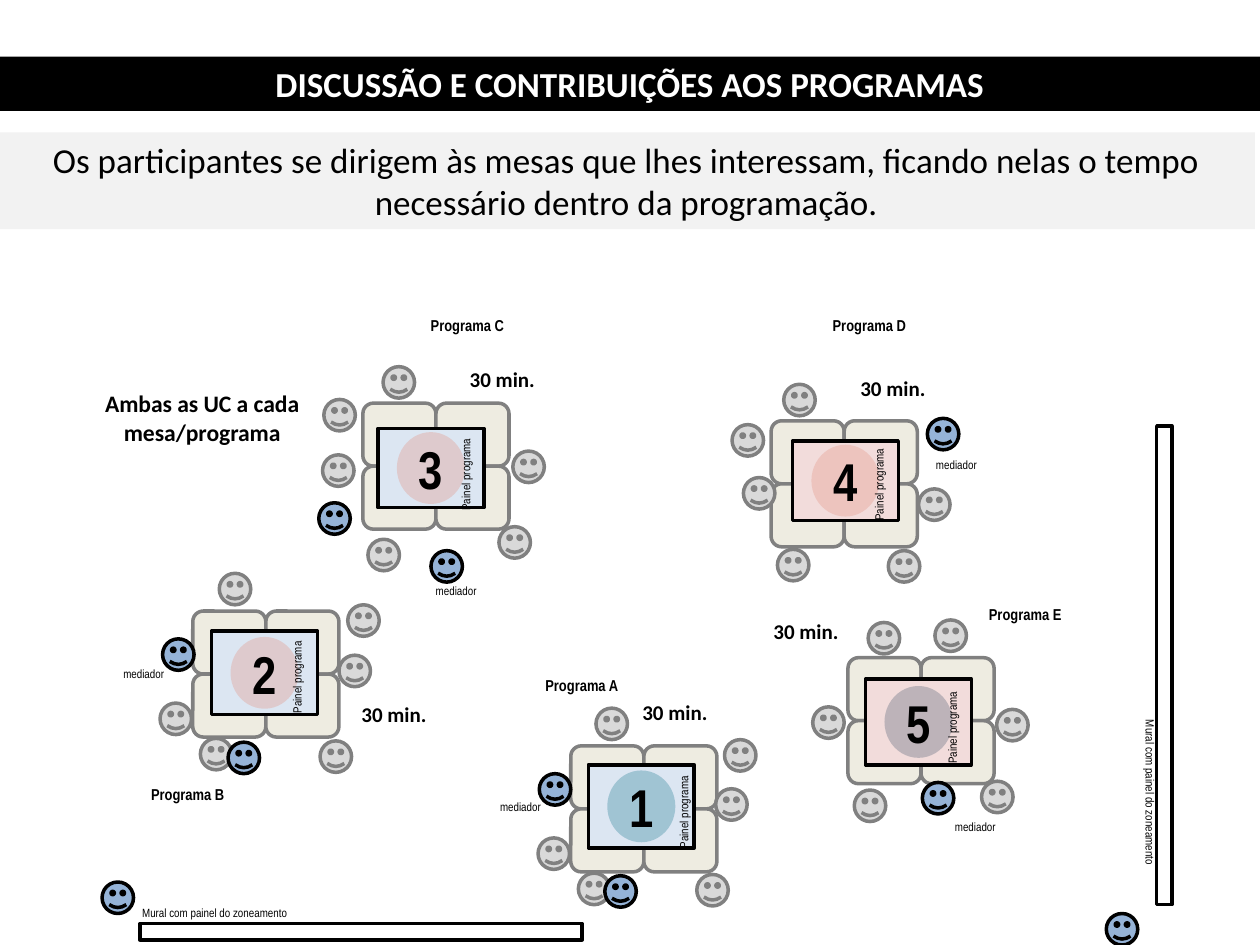
from dataclasses import dataclass

from lxml import etree
from pptx import Presentation
from pptx.dml.color import RGBColor
from pptx.enum.shapes import MSO_SHAPE
from pptx.enum.text import MSO_ANCHOR, MSO_AUTO_SIZE, PP_ALIGN
from pptx.oxml.ns import qn
from pptx.util import Inches, Pt

RECT, ROUNDED = MSO_SHAPE.RECTANGLE, MSO_SHAPE.ROUNDED_RECTANGLE
OVAL, SMILEY = MSO_SHAPE.OVAL, MSO_SHAPE.SMILEY_FACE
LEFT, CENTER = PP_ALIGN.LEFT, PP_ALIGN.CENTER
TOP, MIDDLE = MSO_ANCHOR.TOP, MSO_ANCHOR.MIDDLE
NO_AUTOFIT = MSO_AUTO_SIZE.NONE


@dataclass(frozen=True)
class Theme:
    """Colours, fonts and type sizes of the slide."""
    black: str = "000000"
    white: str = "FFFFFF"
    band: str = "F2F2F2"
    desk: str = "EEECE1"
    grey: str = "808080"
    participant: str = "D9D9D9"
    mediator: str = "95B3D7"
    blue_panel: str = "DCE6F2"
    pink_panel: str = "F2DCDB"
    coral: str = "E4988A"
    slate: str = "5C697C"
    teal: str = "31859C"
    main_font: str = "Calibri"
    label_font: str = "Arial Narrow"
    heading: float = 20
    number: float = 30.4
    note: float = 13.5
    time: float = 12
    program: float = 9
    small: float = 6.8
    outline: float = 2
    circle_opacity: int = 35


THEME = Theme()


@dataclass(frozen=True)
class Station:
    """One discussion table with its people, panel and labels."""
    number: str
    program: str
    program_at: tuple
    time_at: tuple
    desks_at: tuple
    panel_at: tuple
    panel_height: float
    panel_color: str
    circle_color: str
    panel_label_at: tuple
    mediator_label_at: tuple
    participants: tuple
    mediators: tuple


STATIONS = (
    Station("3", "Programa C", (3.32, 2.46), (3.63, 2.86), (2.88, 3.2),
            (3, 3.4), 0.63, THEME.blue_panel, THEME.coral, (3.23, 3.54), (3.36, 4.58),
            ((3.04, 2.91), (2.57, 3.17), (4.07, 3.58), (3.96, 4.18), (2.92, 4.28), (2.56, 3.61)),
            ((3.42, 4.37), (2.53, 3.99))),
    Station("2", "Programa B", (1.1, 6.18), (2.77, 5.52), (1.53, 4.85),
            (1.68, 5.01), 0.66, THEME.blue_panel, THEME.coral, (1.89, 5.15), (0.88, 5.24),
            ((1.74, 4.55), (2.76, 4.8), (2.69, 5.2), (2.54, 5.88), (1.59, 5.86), (1.27, 5.58)),
            ((1.29, 5.07), (1.81, 5.89))),
    Station("4", "Programa D", (6.51, 2.46), (6.73, 2.93), (6.12, 3.34),
            (6.29, 3.5), 0.63, THEME.pink_panel, THEME.coral, (6.51, 3.62), (7.33, 3.58),
            ((6.22, 3.05), (5.81, 3.37), (7.29, 3.88), (7.05, 4.37), (6.17, 4.36), (5.9, 3.79)),
            ((7.36, 3.32),)),
    Station("5", "Programa E", (7.75, 4.75), (6.04, 4.86), (6.73, 5.22),
            (6.87, 5.39), 0.68, THEME.pink_panel, THEME.slate, (7.09, 5.55), (7.48, 6.46),
            ((6.89, 4.94), (7.42, 4.92), (7.91, 5.63), (7.79, 6.2), (6.78, 6.27), (6.45, 5.61)),
            ((7.32, 6.21),)),
    Station("1", "Programa A", (4.23, 5.31), (5, 5.5), (4.53, 5.92),
            (4.67, 6.07), 0.66, THEME.blue_panel, THEME.teal, (4.96, 6.22), (3.87, 6.3),
            ((4.73, 5.62), (5.75, 5.87), (5.68, 6.26), (5.53, 6.94), (4.59, 6.93), (4.27, 6.65)),
            ((4.28, 6.14), (4.8, 6.95))),
)


def write(frame, text, size, font, bold=False, color=THEME.black, align=LEFT, anchor=TOP):
    """Fill a text frame with one formatted paragraph."""
    frame.text = text
    frame.word_wrap = True
    frame.auto_size = NO_AUTOFIT
    frame.vertical_anchor = anchor
    paragraph = frame.paragraphs[0]
    paragraph.alignment = align
    paragraph.font.name = font
    paragraph.font.size = Pt(size)
    paragraph.font.bold = bold
    paragraph.font.color.rgb = RGBColor.from_string(color)


def add_figure(slide, preset, position, size, fill, line=None, rotation=0):
    """Add a preset shape with a solid fill and an optional outline."""
    figure = slide.shapes.add_shape(preset, *map(Inches, (*position, *size)))
    figure.shadow.inherit = False
    figure.rotation = rotation
    figure.fill.solid()
    figure.fill.fore_color.rgb = RGBColor.from_string(fill)
    if line:
        figure.line.color.rgb = RGBColor.from_string(line)
        figure.line.width = Pt(THEME.outline)
    else:
        figure.line.fill.background()
    return figure


def add_label(slide, text, position, size, points, font=THEME.label_font,
              bold=False, align=LEFT, rotation=0):
    """Add a text box, turned if asked."""
    label = slide.shapes.add_textbox(*map(Inches, (*position, *size)))
    label.rotation = rotation
    write(label.text_frame, text, points, font, bold, align=align)


def add_person(slide, position, mediator=False):
    """Add a smiley for a participant or a mediator."""
    fill, line = (THEME.mediator, THEME.black) if mediator else (THEME.participant, THEME.grey)
    add_figure(slide, SMILEY, position, (0.25, 0.25), fill, line)


def add_number(slide, station):
    """Add the translucent numbered circle centred on the panel's height."""
    left, top = station.panel_at
    diameter = 0.57
    circle_top = top + (station.panel_height - diameter) / 2
    circle = add_figure(slide, OVAL, (left + 0.15, circle_top), (0.54, diameter),
                        station.circle_color)
    color = circle.fill._xPr.find(qn("a:solidFill"))[0]
    etree.SubElement(color, qn("a:alpha"), val=str(THEME.circle_opacity * 1000))
    frame = circle.text_frame
    frame.margin_left = frame.margin_right = frame.margin_top = frame.margin_bottom = 0
    write(frame, station.number, THEME.number, THEME.label_font, True,
          align=CENTER, anchor=MIDDLE)


def add_station(slide, station):
    """Add four desks, the people around them, the panel and its labels."""
    left, top = station.desks_at
    for row in range(2):
        for column in range(2):
            add_figure(slide, ROUNDED, (left + column * 0.58, top + row * 0.5),
                       (0.58, 0.5), THEME.desk, THEME.grey)
    for position in station.participants:
        add_person(slide, position)
    for position in station.mediators:
        add_person(slide, position, mediator=True)
    add_figure(slide, RECT, station.panel_at, (0.84, station.panel_height),
               station.panel_color, THEME.black)
    add_number(slide, station)
    add_label(slide, "Painel programa", station.panel_label_at, (0.97, 0.25),
              THEME.small, rotation=270)
    add_label(slide, "mediador", station.mediator_label_at, (0.61, 0.27), THEME.small)
    add_label(slide, station.program, station.program_at, (1.59, 0.32),
              THEME.program, bold=True)
    add_label(slide, "30 min.", station.time_at, (0.84, 0.38), THEME.time,
              THEME.main_font, bold=True)


def add_mural(slide, wall_at, wall_size, label_at, label_size, mediator_at, rotation=0):
    """Add a zoning wall with its label and mediator."""
    add_figure(slide, RECT, wall_at, wall_size, THEME.white, THEME.black, rotation)
    add_label(slide, "Mural com painel do zoneamento", label_at, label_size,
              THEME.small, rotation=rotation)
    add_person(slide, mediator_at, mediator=True)


def add_header(slide):
    """Format the title bar and add the instruction band."""
    title = slide.shapes.title
    title.left, title.top, title.width, title.height = map(Inches, (0, 0.45, 10, 0.43))
    title.fill.solid()
    title.fill.fore_color.rgb = RGBColor.from_string(THEME.black)
    write(title.text_frame, "DISCUSSÃO E CONTRIBUIÇÕES AOS PROGRAMAS", THEME.heading,
          THEME.main_font, True, THEME.white, CENTER, MIDDLE)
    band = add_figure(slide, RECT, (-0.02, 1.05), (9.98, 0.77), THEME.band)
    write(band.text_frame, "Os participantes se dirigem às mesas que lhes interessam, "
          "ficando nelas o tempo necessário dentro da programação.", THEME.heading,
          THEME.main_font, align=CENTER, anchor=MIDDLE)


def main():
    """Build and save the slide."""
    deck = Presentation()
    deck.slide_width, deck.slide_height = Inches(10), Inches(7.5)
    slide = deck.slides.add_slide(deck.slide_layouts[5])
    add_header(slide)
    add_mural(slide, (1.11, 7.33), (3.51, 0.13), (1.03, 7.14), (1.57, 0.27), (0.81, 7))
    add_mural(slide, (7.34, 5.22), (3.8, 0.12), (8.26, 6.34), (1.7, 0.25), (8.78, 7.25), 90)
    for station in STATIONS:
        add_station(slide, station)
    add_label(slide, "Ambas as UC a cada mesa/programa", (0.73, 3.04), (1.75, 0.98),
              THEME.note, THEME.main_font, bold=True, align=CENTER)
    deck.save("out.pptx")


if __name__ == "__main__":
    main()
